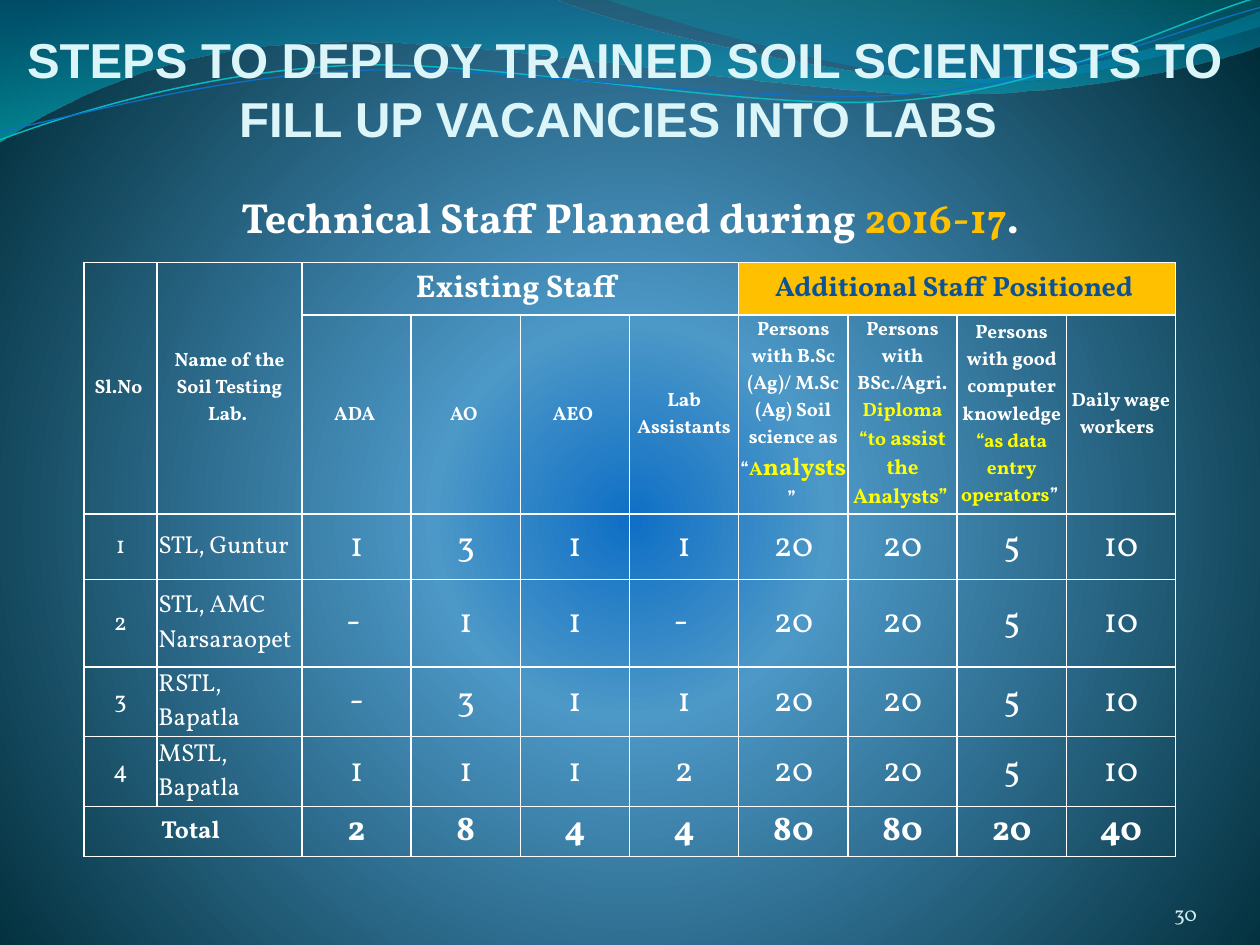
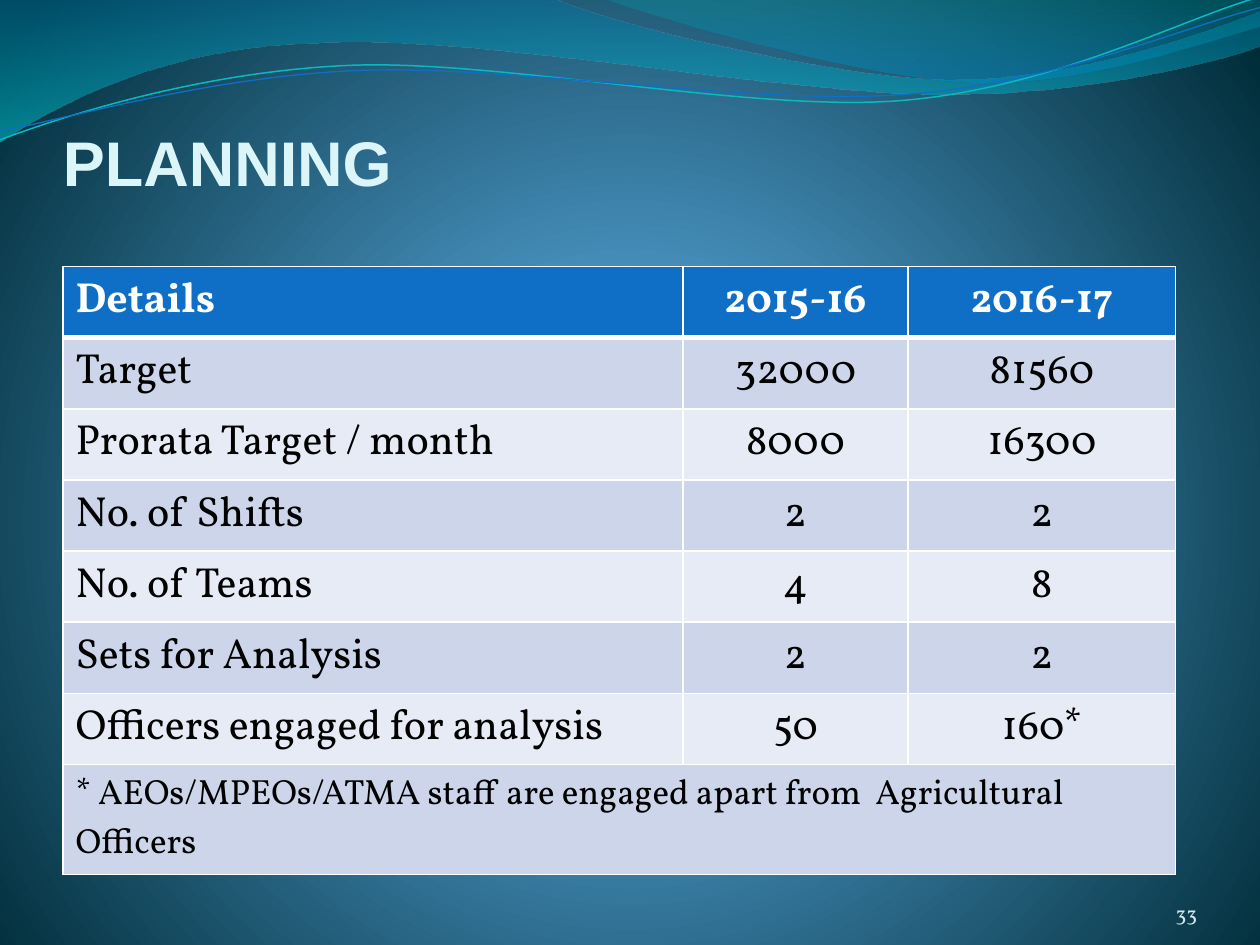
"""Build two slides on soil laboratory staffing and planning."""
from pptx import Presentation
from pptx.dml.color import RGBColor
from pptx.enum.text import MSO_ANCHOR, PP_ALIGN
from pptx.oxml import parse_xml
from pptx.oxml.ns import nsdecls, qn
from pptx.util import Pt

LEFT, MID, RIGHT = PP_ALIGN.LEFT, PP_ALIGN.CENTER, PP_ALIGN.RIGHT
TOP, CENTER, BASE = MSO_ANCHOR.TOP, MSO_ANCHOR.MIDDLE, MSO_ANCHOR.BOTTOM


class Theme:
    """Colours, fonts and type sizes."""

    head, body = "Arial", "Vollkorn"
    white, black, pale, mist = "FFFFFF", "000000", "DBF5F9", "D1EAEE"
    gold, yellow, navy, blue = "FFC000", "FFFF00", "0B5394", "0F6FC6"
    teal, sky, azure, deep = "0AB8BF", "4C98C7", "4AA0D6", "002C38"
    dark, light = "CCD5EA", "E7EBF5"
    label, page, lead, name, note = 11, 12, 24, 14, 20
    group, extra, count, large, title = 18, 16, 20, 36, 28


def write(frame, runs, align=LEFT, anchor=TOP, inset=(7.2, 3.6, 7.2, 3.6),
          face=Theme.body, bold=False):
    frame.margin_left, frame.margin_top, frame.margin_right, frame.margin_bottom = map(Pt, inset)
    frame.vertical_anchor = anchor
    text = getattr(frame, "text_frame", frame)
    text.word_wrap = True
    para = text.paragraphs[0]
    para.alignment = align
    for words, size, color in runs:
        run = para.add_run()
        run.text = words
        run.font.name, run.font.size, run.font.bold = face, Pt(size), bold
        run.font.color.rgb = RGBColor.from_string(color)
    return para


def dress(cell, fill=None, above=1, below=1):
    if fill:
        cell.fill.solid()
        cell.fill.fore_color.rgb = RGBColor.from_string(fill)
    else:
        cell.fill.background()
    props = cell._tc.get_or_add_tcPr()
    for spot, (side, width) in enumerate(zip("LRTB", (1, 1, above, below))):
        props.insert(spot, parse_xml(
            f'<a:ln{side} {nsdecls("a")} w="{Pt(width)}"><a:solidFill>'
            f'<a:srgbClr val="{Theme.white}"/></a:solidFill></a:ln{side}>'))


deck = Presentation()
deck.slide_width, deck.slide_height = Pt(720), Pt(540)
blank = deck.slide_layouts[6]

DOWN = '<a:lin ang="5400000" scaled="1"/>'
GLOW = ('<a:path path="circle"><a:fillToRect l="10000" t="110000" '
        'r="10000" b="100000"/></a:path>')

waves = [
    ((0, 0),
     [(316.8, -0.7), (342.7, 12.2, 478.1, 45.4, 545.8, 45.4),
      (614.2, 45.4, 689.8, 18.7, 720, 6.5), (720.7, 25.9),
      (707.8, 31.7, 626.4, 54.7, 537.1, 54), (447.8, 54, 275, 20.2, 185, 24.5),
      (92.9, 25.9, 33.1, 59.8, -0.7, 81.4), (0, 0)],
     [(0, "0074A1", 45), (100, "00C6CF", 55)], None),
    ((344.9, -0.7),
     [(366.5, 7.9, 491, 44.6, 553.7, 46.8),
      (616.3, 49.7, 691.9, 23, 720, 15.1), (720, 0), (344.9, -0.7)],
     [(0, "00A1A9", 30), (80, "008BBF", 45)], None),
    ((0, 79.9),
     [(34.6, 67, 113.8, 41, 199.4, 37.4), (284.4, 33.8, 427, 64.1, 513.4, 57.6),
      (599.8, 51.1, 675.4, 10.8, 718.6, -1.4)],
     None, (Theme.teal, 0.85)),
    ((0, 74.9),
     [(33.8, 69.1, 118.1, 43.9, 203.8, 40.3), (290.2, 36.7, 429.8, 60.5, 516.2, 54),
      (601.9, 48.2, 677.5, 15.1, 720, 4.3)],
     None, (Theme.blue, 0.75)),
]

pages = [
    (Theme.blue, "30", "STEPS TO DEPLOY TRAINED SOIL SCIENTISTS TO FILL UP VACANCIES INTO LABS ",
     (6, 12, 702, 72), Theme.title, MID),
    (Theme.azure, "33", "PLANNING", (36, 66, 648, 48), Theme.large, LEFT),
]
for core, number, title, box, size, align in pages:
    slide = deck.slides.add_slide(blank)
    slide.background.fill.gradient()
    fades = [(slide.background._cSld,
              [(0, core, 100), (25, Theme.sky, 100), (100, Theme.deep, 100)], GLOW)]
    for start, parts, stops, line in waves:
        pen = slide.shapes.build_freeform(Pt(start[0]), Pt(start[1]))
        dots = [part[i:i + 2] for part in parts for i in range(0, len(part), 2)]
        pen.add_line_segments([(Pt(x), Pt(y)) for x, y in dots], close=bool(stops))
        wave = pen.convert_to_shape()
        wave.shadow.inherit = False
        marks = iter(wave._element.findall(".//" + qn("a:lnTo")))
        for part in parts:
            bend = next(marks)
            if len(part) == 6:
                bend.tag = qn("a:cubicBezTo")
                for mark in (next(marks), next(marks)):
                    bend.append(mark[0])
                    mark.getparent().remove(mark)
        if stops:
            wave.fill.gradient()
            wave.line.fill.background()
            fades.append((wave._element, stops, DOWN))
        else:
            wave.fill.background()
            wave.line.color.rgb = RGBColor.from_string(line[0])
            wave.line.width = Pt(line[1])
    for host, stops, shade in fades:
        grad = host.find(".//" + qn("a:gradFill"))
        tints = "".join(
            f'<a:gs pos="{at * 1000}"><a:srgbClr val="{color}">'
            f'<a:alpha val="{alpha * 1000}"/></a:srgbClr></a:gs>'
            for at, color, alpha in stops)
        grad.getparent().replace(grad, parse_xml(
            f'<a:gradFill {nsdecls("a")} rotWithShape="1">'
            f'<a:gsLst>{tints}</a:gsLst>{shade}</a:gradFill>'))
    head = slide.shapes.add_textbox(*map(Pt, box))
    write(head.text_frame, [(title, size, Theme.pale)], align, BASE,
          (0, 3.6, 0, 0), Theme.head, True)
    foot = slide.shapes.add_textbox(Pt(624), Pt(500.5), Pt(60), Pt(28.5))
    write(foot.text_frame, [(number, Theme.page, Theme.mist)], RIGHT, BASE, (0, 0, 0, 0))

staff, plan = deck.slides

lead = staff.shapes.add_textbox(Pt(36), Pt(106), Pt(648), Pt(38))
para = write(lead.text_frame, [
    ("Technical Staff Planned during ", Theme.lead, Theme.white),
    ("2016-17", Theme.lead, Theme.gold),
    (".", Theme.lead, Theme.white)], MID, bold=True)
para.space_before = Pt(4.8)

small, white, yellow = Theme.label, Theme.white, Theme.yellow
tops = {
    (0, 0): [("Sl.No ", small, white)],
    (0, 1): [("Name of the Soil Testing Lab. ", small, white)],
    (0, 2): [("Existing Staff ", Theme.group, white)],
    (0, 6): [("Additional Staff Positioned ", Theme.extra, Theme.navy)],
    (1, 2): [("ADA ", small, white)],
    (1, 3): [("AO ", small, white)],
    (1, 4): [("AEO ", small, white)],
    (1, 5): [("Lab Assistants", small, white)],
    (1, 6): [("Persons with B.Sc (Ag)/ M.Sc (Ag) Soil science as “", small, white),
             ("A", small, yellow), ("nalysts", Theme.name, yellow), ("” ", small, white)],
    (1, 7): [("Persons with BSc./Agri. ", small, white), ("Diploma “to", small, yellow),
             (" assist the Analysts” ", Theme.page, yellow)],
    (1, 8): [("Persons with good computer knowledge ", small, white),
             ("“as data entry operators", small, yellow), ("” ", small, white)],
    (1, 9): [("Daily wage workers  ", small, white)],
}
labs = [
    ("1", "STL, Guntur", "1", "3", "1", "1", "20", "20", "5", "10"),
    ("2", "STL, AMC Narsaraopet", "- ", "1", "1", "- ", "20", "20", "5", "10"),
    ("3", "RSTL, Bapatla", "-", "3", "1", "1", "20", "20", "5", "10"),
    ("4", "MSTL, Bapatla", "1", "1", "1", "2", "20", "20", "5", "10"),
    ("Total ", "", "2", "8", "4", "4", "80", "80", "20", "40"),
]
wide = [41.8, 82.8] + [62.4] * 8
tall = [30, 113.7, 37.5, 50, 39.8, 39.8, 28.6]
grid = staff.shapes.add_table(len(tall), len(wide), Pt(48), Pt(150),
                              Pt(sum(wide)), Pt(sum(tall))).table
grid.first_row = grid.horz_banding = False
for col, width in zip(grid.columns, wide):
    col.width = Pt(width)
for row, height in zip(grid.rows, tall):
    row.height = Pt(height)
for first, last in [((0, 0), (1, 0)), ((0, 1), (1, 1)), ((0, 2), (0, 5)),
                    ((0, 6), (0, 9)), ((6, 0), (6, 1))]:
    grid.cell(*first).merge(grid.cell(*last))
for r in range(len(tall)):
    for c in range(len(wide)):
        cell = grid.cell(r, c)
        dress(cell, Theme.gold if r == 0 and c > 5 else None)
        if cell.is_spanned:
            continue
        runs = tops[r, c] if r < 2 else [
            (labs[r - 2][c], Theme.name if c < 2 else Theme.count, white)]
        align = LEFT if c == 1 and r > 1 else MID
        write(cell, runs, align, CENTER, (0.7, 0.7, 0.7, 0), bold=r < 2 or r == 6)

goals = [
    ("Details", "2015-16", "2016-17"),
    ("Target", "32000", "81560"),
    ("Prorata Target / month", "8000", "16300"),
    ("No. of Shifts", "2", "2"),
    ("No. of Teams", "4", "8"),
    ("Sets for Analysis", "2", "2"),
    ("Officers engaged for analysis", "50", "160*"),
    ("* AEOs/MPEOs/ATMA staff are engaged apart from  Agricultural Officers", "", ""),
]
wide = [354.2, 128.8, 152.8]
tall = [40.65] * 7 + [62.9]
grid = plan.shapes.add_table(len(tall), len(wide), Pt(36), Pt(152.3),
                             Pt(sum(wide)), Pt(sum(tall))).table
grid.first_row = grid.horz_banding = False
for col, width in zip(grid.columns, wide):
    col.width = Pt(width)
for row, height in zip(grid.rows, tall):
    row.height = Pt(height)
grid.cell(7, 0).merge(grid.cell(7, 2))
for r, goal in enumerate(goals):
    fill = (Theme.light, Theme.dark)[r % 2] if r else Theme.blue
    for c, words in enumerate(goal):
        cell = grid.cell(r, c)
        dress(cell, fill, 3 if r == 1 else 1, 1 if r else 3)
        if words:
            size = Theme.note if r == 7 else Theme.lead
            color = Theme.black if r else Theme.white
            write(cell, [(words, size, color)], MID if c else LEFT, bold=r == 0)

deck.save("out.pptx")
